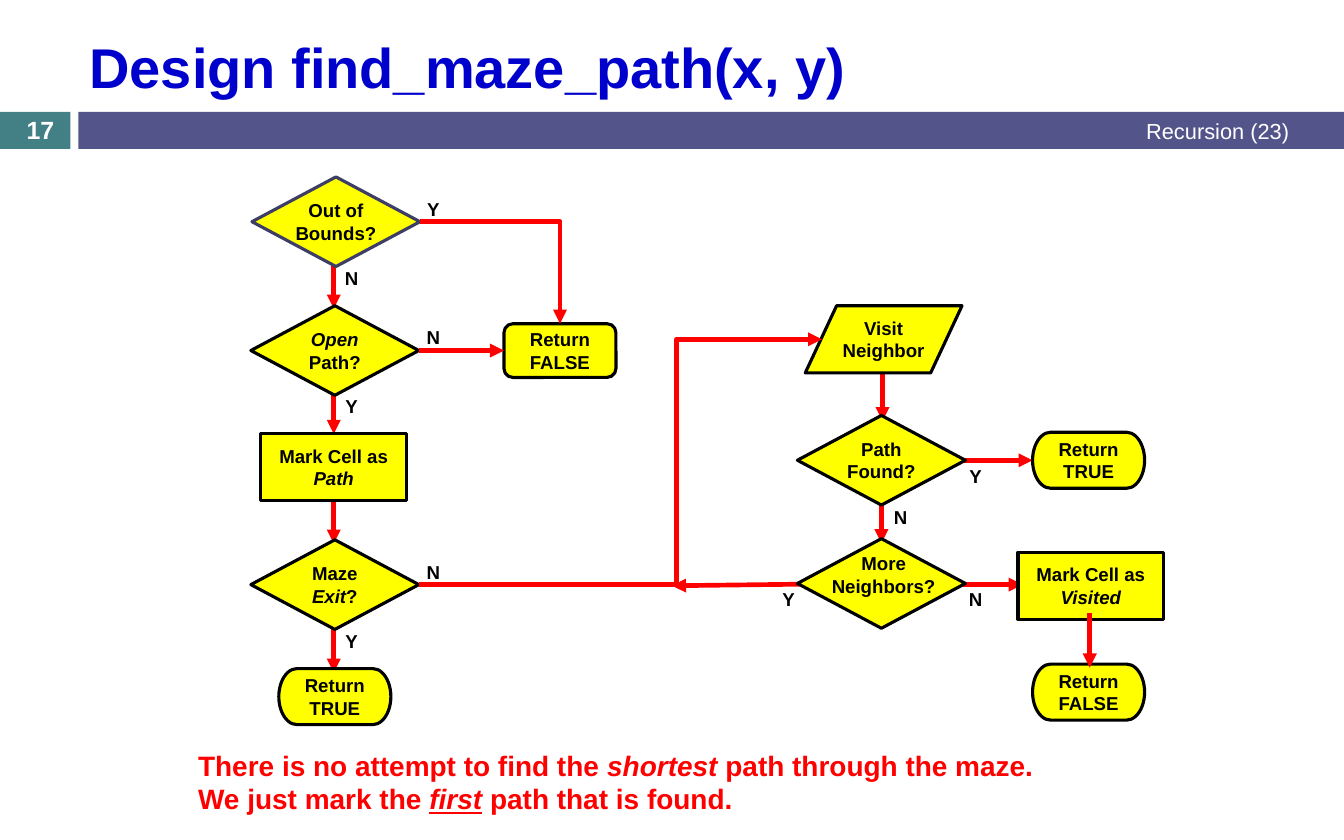
from dataclasses import dataclass

from lxml import etree
from pptx import Presentation
from pptx.dml.color import RGBColor
from pptx.enum.shapes import MSO_CONNECTOR, MSO_SHAPE
from pptx.enum.text import MSO_ANCHOR, PP_ALIGN
from pptx.oxml.ns import qn
from pptx.util import Inches, Pt

COLORS = {"yellow": "FFFF00", "black": "000000", "red": "FF0000", "white": "FFFFFF",
          "teal": "438086", "indigo": "53548A", "dusk": "3D3E66", "blue": "0000CC"}
FONT = "Arial"
CELL = 0.1  # inches per grid column and row
COLUMNS, ROWS = 120, 75
LEFT, CENTER, RIGHT = PP_ALIGN.LEFT, PP_ALIGN.CENTER, PP_ALIGN.RIGHT
MIDDLE, TOP = MSO_ANCHOR.MIDDLE, MSO_ANCHOR.TOP
STRAIGHT, ELBOW = MSO_CONNECTOR.STRAIGHT, MSO_CONNECTOR.ELBOW
RECTANGLE = MSO_SHAPE.RECTANGLE

# Preset, columns, rows, and whether the text has no margin
NODES = {
    "decision": (MSO_SHAPE.FLOWCHART_DECISION, 15, 8, True),
    "process": (MSO_SHAPE.FLOWCHART_PROCESS, 13, 6, False),
    "terminator": (MSO_SHAPE.FLOWCHART_TERMINATOR, 10, 5, False),
    "alternate": (MSO_SHAPE.FLOWCHART_ALTERNATE_PROCESS, 10, 4.8, False),
    "data": (MSO_SHAPE.FLOWCHART_DATA, 14, 6, True),
}


@dataclass
class Box:
    left: float
    top: float
    width: float
    height: float

    def inner(self, left, top, width, height):
        return Box(self.left + left, self.top + top, width, height)

    def around(self, x, y, width, height):
        return self.inner(x - width / 2, y - height / 2, width, height)

    def inches(self):
        return [Inches(n * CELL) for n in (self.left, self.top, self.width, self.height)]


def write(shape, text, size=12, color="black", bold=True, align=CENTER, anchor=MIDDLE,
          tight=False, wrap=True, underlined=None):
    """Each line is a paragraph; words between asterisks are italic."""
    frame = shape.text_frame
    frame.word_wrap = wrap
    frame.vertical_anchor = anchor
    if tight:
        frame.margin_left = frame.margin_right = frame.margin_top = frame.margin_bottom = 0
    for row, line in enumerate(text.split("\n")):
        para = frame.paragraphs[0] if row == 0 else frame.add_paragraph()
        para.alignment = align
        for index, words in enumerate(line.split("*")):
            if not words:
                continue
            span = para.add_run()
            span.text = words
            font = span.font
            font.name, font.size, font.bold = FONT, Pt(size), bold
            font.italic = index % 2 == 1
            font.underline = words == underlined
            font.color.rgb = RGBColor.from_string(COLORS[color])


def add_text(page, box, text, **style):
    write(page.shapes.add_textbox(*box.inches()), text, **style)


def add_block(page, box, preset, fill, line=None):
    shape = page.shapes.add_shape(preset, *box.inches())
    shape.shadow.inherit = False
    shape.fill.solid()
    shape.fill.fore_color.rgb = RGBColor.from_string(COLORS[fill])
    if line:
        shape.line.color.rgb = RGBColor.from_string(COLORS[line])
        shape.line.width = Pt(2)
    else:
        shape.line.fill.background()
    return shape


def add_node(page, box, kind, x, y, text="", line="black"):
    preset, width, height, tight = NODES[kind]
    shape = add_block(page, box.around(x, y, width, height), preset, "yellow", line)
    if text:
        write(shape, text, tight=tight)


def add_label(page, box, x, y, text):
    add_text(page, box.around(x, y, 2.8, 2), text, tight=True, anchor=TOP)


def add_arrow(page, box, start_x, start_y, end_x, end_y, kind=STRAIGHT):
    ends = (box.left + start_x, box.top + start_y, box.left + end_x, box.top + end_y)
    arrow = page.shapes.add_connector(kind, *[Inches(n * CELL) for n in ends])
    arrow.line.color.rgb = RGBColor.from_string(COLORS["red"])
    arrow.line.width = Pt(3)
    properties = arrow.element.find(qn("p:spPr"))
    etree.SubElement(properties.find(qn("a:ln")), qn("a:tailEnd"), type="triangle")
    etree.SubElement(properties, qn("a:effectLst"))
    return properties.find(qn("a:prstGeom"))


def add_header(page, box):
    add_block(page, box.inner(0, 10, 6.3, 3.3), RECTANGLE, "teal")
    add_block(page, box.inner(7, 10, box.width - 7, 3.3), RECTANGLE, "indigo")
    add_text(page, box.inner(7, 1.9, 109.1, 8), "Design find_maze_path(x, y)",
             size=36, color="blue", align=LEFT)
    add_text(page, box.inner(0, 10.1, 7.2, 3), "17", size=16, color="white")
    add_text(page, box.inner(45, 9.9, 71.1, 3.5), "Recursion (23)",
             size=14, color="white", bold=False, align=RIGHT)


def add_cell_checks(page, box):
    # Arrows down the column
    for top in (7.6, 18.8, 28.6, 40.1):
        add_arrow(page, box, 7.8, top, 7.8, top + 4.95)
    # Steps
    add_node(page, box, "decision", 8, 4.8, "Out of Bounds?", line="dusk")
    add_node(page, box, "decision", 7.9, 16.3, "*Open* Path?")
    add_node(page, box, "process", 7.8, 26.7, "Mark Cell as *Path*")
    add_node(page, box, "decision", 7.9, 37.2, "Maze *Exit*?")
    add_node(page, box, "terminator", 7.9, 47.2, "Return TRUE")
    add_node(page, box, "alternate", 28, 16.3, "Return FALSE")
    # Failed checks
    add_arrow(page, box, 15.4, 16.3, 23, 16.3)
    corner = add_arrow(page, box, 15.5, 4.8, 28, 13.9, ELBOW)
    corner.set("prst", "bentConnector2")
    # Answers
    for x, y, text in ((16.7, 3.7, "Y"), (16.7, 15.1, "N"), (16.7, 36.1, "N"),
                       (9.4, 9.8, "N"), (9.4, 21.3, "Y"), (9.4, 42.2, "Y")):
        add_label(page, box, x, y, text)


def add_neighbor_loop(page, box):
    # Arrows between steps
    for ends in ((16.7, 25.1, 0, 25.3), (20.9, 25.2, 31.3, 25.2), (18.7, 16.5, 18.7, 21.5),
                 (21.8, 14.1, 32.2, 14.1), (18.8, 5.7, 18.8, 10.6)):
        add_arrow(page, box, *ends)
    # Steps
    add_node(page, box, "data", 18.9, 3.3, "Visit\nNeighbor")
    add_node(page, box, "decision", 18.7, 14.1, "Path Found?")
    add_node(page, box, "decision", 18.7, 25.1)
    add_text(page, box.around(18.9, 24.3, 11.4, 5), "More\nNeighbors?",
             wrap=False, anchor=TOP)
    add_node(page, box, "terminator", 37.2, 14.1, "Return TRUE")
    add_node(page, box, "process", 37.4, 25.3, "Mark Cell as *Visited*")
    add_node(page, box, "terminator", 37.2, 34.8, "Return FALSE")
    add_arrow(page, box, 37.3, 27.7, 37.3, 32.6)
    # The process covers the start of its arrow's shaft only up to its lower edge
    # Answers
    for x, y, text in ((10.4, 26.5, "Y"), (27.1, 26.5, "N"),
                       (20.4, 19.2, "N"), (27.1, 15.5, "Y")):
        add_label(page, box, x, y, text)


def add_loop_entry(page, box):
    geometry = add_arrow(page, box, 0, box.height, box.width, 0, ELBOW)
    guides = geometry.find(qn("a:avLst"))
    if guides is None:
        guides = etree.SubElement(geometry, qn("a:avLst"))
    etree.SubElement(guides, qn("a:gd"), name="adj1", fmla="val 63900")


def add_note(page, box):
    add_text(page, box, "There is no attempt to find the *shortest* path through the maze.\n"
             "We just mark the *first* path that is found.",
             size=18, color="red", align=LEFT, anchor=TOP, underlined="first")


def main():
    deck = Presentation()
    deck.slide_width, deck.slide_height = Inches(COLUMNS * CELL), Inches(ROWS * CELL)
    page = deck.slides.add_slide(deck.slide_layouts[6])
    add_header(page, Box(0, 0, COLUMNS, 13.3))
    add_neighbor_loop(page, Box(60, 27, 44, 38))
    add_cell_checks(page, Box(22, 15, 33, 50))
    add_loop_entry(page, Box(37.4, 30.3, 36, 21.9))
    add_note(page, Box(16.7, 66.3, 87.5, 7.1))
    deck.save("out.pptx")


if __name__ == "__main__":
    main()
